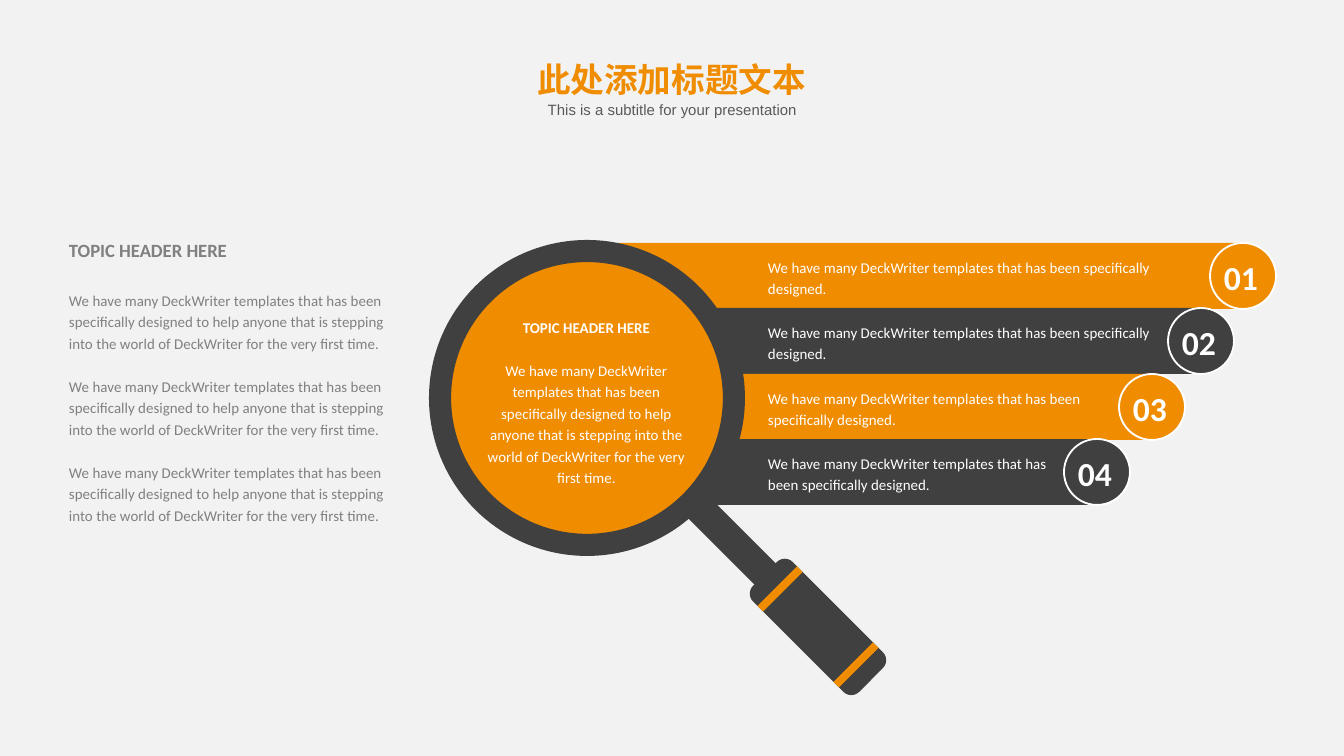
from lxml import etree
from pptx import Presentation
from pptx import util as u
from pptx.dml.color import RGBColor
from pptx.enum import shapes, text
from pptx.oxml.ns import qn

PX = 914400 / 134.4
ORANGE = RGBColor(0xF0, 0x8C, 0x00)
DARK = RGBColor(0x40, 0x40, 0x40)
WHITE = RGBColor(0xFF, 0xFF, 0xFF)
GRAY = RGBColor(0x80, 0x80, 0x80)
SUBTITLE = RGBColor(0x59, 0x59, 0x59)
PAPER = RGBColor(0xF2, 0xF2, 0xF2)
LEFT, CENTER = text.PP_ALIGN.LEFT, text.PP_ALIGN.CENTER
KIND = shapes.MSO_SHAPE

HEADER = "TOPIC HEADER HERE"
PITCH = "We have many DeckWriter templates that has been specifically designed"
STORY = (PITCH + " to help anyone that is stepping into the world of "
         "DeckWriter for the very first time.")
HANDLE_OFFSET = 191
BAR_HEIGHT = 66
BARS = [
    (618, 1243, 433, ORANGE),
    (577, 1201, 391, DARK),
    (527, 1152, 337, ORANGE),
    (520, 1097, 296, DARK),
]


def px(value):
    return u.Emu(round(value * PX))


class Slide:
    def __init__(self, deck):
        self.page = deck.slides.add_slide(deck.slide_layouts[6])
        self.page.background.fill.solid()
        self.page.background.fill.fore_color.rgb = PAPER

    def shape(self, kind, left, top, width, height, color, outline=None):
        item = self.page.shapes.add_shape(
            kind, px(left), px(top), px(width), px(height))
        item.shadow.inherit = False
        item.fill.solid()
        item.fill.fore_color.rgb = color
        if outline is None:
            item.line.fill.background()
        else:
            item.line.color.rgb = outline
            item.line.width = u.Pt(1)
        return item

    def handle_part(self, kind, center, length, thickness, color):
        item = self.shape(kind, center - length // 2,
                          center - HANDLE_OFFSET - thickness // 2,
                          length, thickness, color)
        item.rotation = 45
        return item

    def box(self, left, top, width, height, paragraphs, color, align=LEFT,
            font="Calibri", spacing=1.2, anchor=text.MSO_ANCHOR.TOP):
        frame = self.page.shapes.add_textbox(
            px(left), px(top), px(width), px(height)).text_frame
        frame.word_wrap = True
        frame.vertical_anchor = anchor
        frame.margin_left = frame.margin_right = 0
        frame.margin_top = frame.margin_bottom = 0
        for index, (words, size, bold, gap) in enumerate(paragraphs):
            para = frame.add_paragraph() if index else frame.paragraphs[0]
            para.text = words
            para.alignment = align
            para.line_spacing = spacing
            para.space_after = u.Pt(gap)
            para.font.name = font
            para.font.size = u.Pt(size)
            para.font.bold = bold
            para.font.color.rgb = color
            for style in para._p.iter(qn("a:defRPr")):
                etree.SubElement(style, qn("a:ea")).set("typeface", font)


def main():
    deck = Presentation()
    deck.slide_width, deck.slide_height = px(1344), px(756)
    slide = Slide(deck)

    tops = [243 + index * 131 // 2 for index in range(len(BARS))]
    for top, (left, end, _, color) in zip(tops, BARS):
        slide.shape(KIND.RECTANGLE, left, top, end - left, BAR_HEIGHT, color)
        slide.shape(KIND.OVAL, end - BAR_HEIGHT // 2, top,
                    BAR_HEIGHT, BAR_HEIGHT, color, WHITE)

    slide.shape(KIND.OVAL, 449, 261, 275, 275, ORANGE)
    ring = slide.shape(KIND.DONUT, 429, 240, 316, 316, DARK)
    ring.adjustments[0] = 0.07
    slide.handle_part(KIND.RECTANGLE, 732, 102, 30, DARK)
    grip = slide.handle_part(KIND.ROUNDED_RECTANGLE, 818, 150, 56, DARK)
    grip.adjustments[0] = 0.2
    for center in (780, 856):
        slide.handle_part(KIND.RECTANGLE, center, 8, 56, ORANGE)

    slide.box(69, 234, 317, 293,
              [(HEADER, 10, True, 14.6), (STORY, 8, False, 11.6),
               (STORY, 8, False, 11.6), (STORY, 8, False, 0)], GRAY)
    slide.box(480, 315, 213, 172,
              [(HEADER, 8, True, 11.6), (STORY, 8, False, 0)], WHITE, CENTER)

    for number, (top, (_, end, width, _)) in enumerate(zip(tops, BARS), 1):
        slide.box(768, top + 12, width, 43,
                  [(PITCH + ".", 8, False, 0)], WHITE)
        slide.box(end - 34, top + 7, 64, 54,
                  [(f"{number:02}", 18, True, 0)], WHITE, CENTER,
                  spacing=1.0, anchor=text.MSO_ANCHOR.MIDDLE)

    slide.box(508, 52, 327, 54, [("此处添加标题文本", 18, True, 0)], ORANGE,
              CENTER, "Noto Sans CJK SC", 1.0, text.MSO_ANCHOR.MIDDLE)
    slide.box(540, 101, 265, 18,
              [("This is a subtitle for your presentation", 8, False, 0)],
              SUBTITLE, CENTER, "Arial", 1.0)
    deck.save("out.pptx")


if __name__ == "__main__":
    main()
